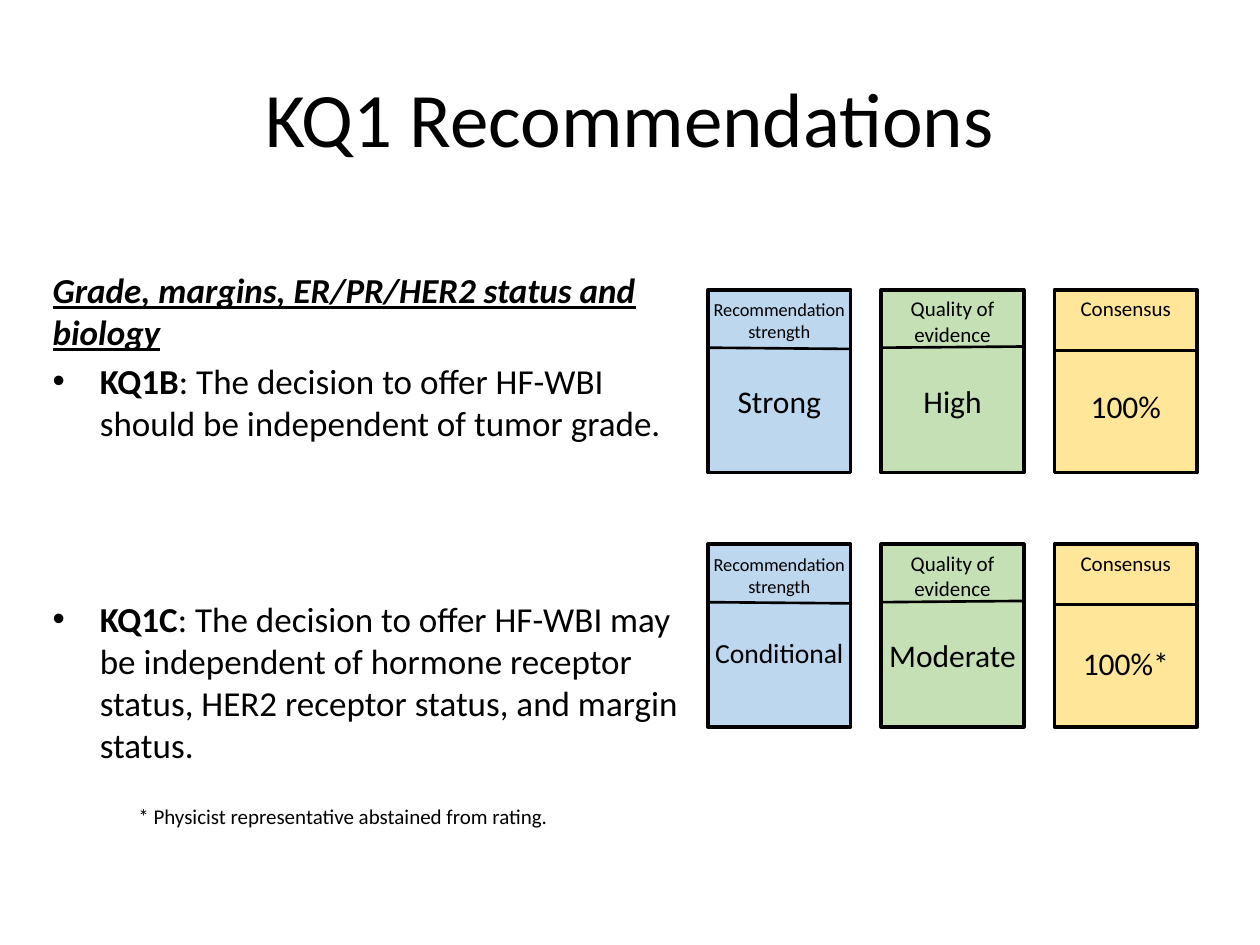
from lxml import etree
from pptx import Presentation
from pptx.dml.color import RGBColor
from pptx.enum import shapes, text
from pptx.oxml import ns
from pptx.util import Pt

BLACK = RGBColor(0, 0, 0)
BLUE = RGBColor(0xBD, 0xD7, 0xEE)
GREEN = RGBColor(0xC5, 0xE0, 0xB4)
YELLOW = RGBColor(0xFF, 0xE6, 0x99)
CENTER = text.PP_ALIGN.CENTER
TOP, MIDDLE, BOTTOM = text.MSO_ANCHOR.TOP, text.MSO_ANCHOR.MIDDLE, text.MSO_ANCHOR.BOTTOM


def add_box(parent, left, top, width, height, anchor=TOP, side=7.2, edge=3.6):
    box = parent.add_textbox(Pt(left), Pt(top), Pt(width), Pt(height))
    frame_format = {
        "word_wrap": True, "vertical_anchor": anchor,
        "margin_left": Pt(side), "margin_right": Pt(side),
        "margin_top": Pt(edge), "margin_bottom": Pt(edge),
    }
    for name, value in frame_format.items():
        setattr(box.text_frame, name, value)
    return box.text_frame


def add_run(paragraph, words, size, **styles):
    run = paragraph.add_run()
    run.text = words
    run.font.color.rgb = BLACK
    for name, value in {"name": "Calibri", "size": Pt(size), **styles}.items():
        setattr(run.font, name, value)


presentation = Presentation()
presentation.slide_width, presentation.slide_height = Pt(720), Pt(540)
slide = presentation.slides.add_slide(presentation.slide_layouts[6])

title = add_box(slide.shapes, 36, 21.6, 648, 90, MIDDLE).paragraphs[0]
title.alignment = CENTER
add_run(title, "KQ1 Recommendations", 44)

body = add_box(slide.shapes, 23, 150, 381.6, 278.6)
add_run(body.paragraphs[0], "Grade, margins, ER/PR/HER2 status and biology", 20,
        bold=True, italic=True, underline=True)
statements = [
    ("KQ1B", ": The decision to offer HF-WBI should be independent of tumor grade.", 4),
    ("KQ1C", ": The decision to offer HF-WBI may be independent of hormone receptor "
             "status, HER2 receptor status, and margin status.", 87.6),
]
for label, statement, space in statements:
    paragraph = body.add_paragraph()
    paragraph.space_before = Pt(space)
    properties = paragraph._p.get_or_add_pPr()
    properties.set("marL", str(Pt(27)))
    properties.set("indent", str(-Pt(27)))
    etree.SubElement(properties, ns.qn("a:buFont")).set("typeface", "Arial")
    etree.SubElement(properties, ns.qn("a:buChar")).set("char", "•")
    add_run(paragraph, label, 20, bold=True)
    add_run(paragraph, statement, 20)

CARD_WIDTH, CARD_HEIGHT = 81.6, 104.4
columns = [
    ("Recommendation strength", 10.5, 5, 36, BLUE, 33.1, 33.8),
    ("Quality of evidence", 12, 3.6, 36, GREEN, 33.1, 32.4),
    ("Consensus", 12, 3.6, 21.6, YELLOW, 34.6, 34.6),
]
ratings = [
    [("Strong", 18, 32.4, 45.4), ("High", 18, 32.4, 45.4), ("100%", 18, 51.8, 28.8)],
    [("Conditional", 15.75, 32.4, 42.5), ("Moderate", 18, 32.4, 45.4), ("100%*", 18, 34.6, 47.5)],
]
for row, values in enumerate(ratings):
    top = 165.6 + row * 145.4
    group = slide.shapes.add_group_shape().shapes
    for column, (heading, rating) in enumerate(zip(columns, values)):
        left = 404.5 + column * 99
        caption, caption_size, edge, caption_height, fill, line_start, line_end = heading
        value, value_size, value_top, value_height = rating

        card = group.add_shape(shapes.MSO_SHAPE.RECTANGLE,
                               Pt(left), Pt(top), Pt(CARD_WIDTH), Pt(CARD_HEIGHT))
        card.shadow.inherit = False
        card.fill.solid()
        card.fill.fore_color.rgb = fill
        card.line.color.rgb = BLACK
        card.line.width = Pt(2)

        divider = group.add_connector(shapes.MSO_CONNECTOR.STRAIGHT,
                                      Pt(left), Pt(top + line_start),
                                      Pt(left + CARD_WIDTH), Pt(top + line_end))
        divider.line.color.rgb = BLACK
        divider.line.width = Pt(1.5)
        etree.SubElement(divider._element.spPr, ns.qn("a:effectLst"))

        labels = [
            (caption, caption_size, 0, caption_height, TOP, edge),
            (value, value_size, value_top, value_height, BOTTOM, 3.6),
        ]
        for words, size, offset, height, anchor, inset in labels:
            frame = add_box(group, left, top + offset, CARD_WIDTH, height, anchor, 2.7, inset)
            frame.paragraphs[0].alignment = CENTER
            add_run(frame.paragraphs[0], words, size)

footnote = add_box(slide.shapes, 72, 455.8, 249, 21.6)
add_run(footnote.paragraphs[0], "* Physicist representative abstained from rating.", 12)

presentation.save("out.pptx")
